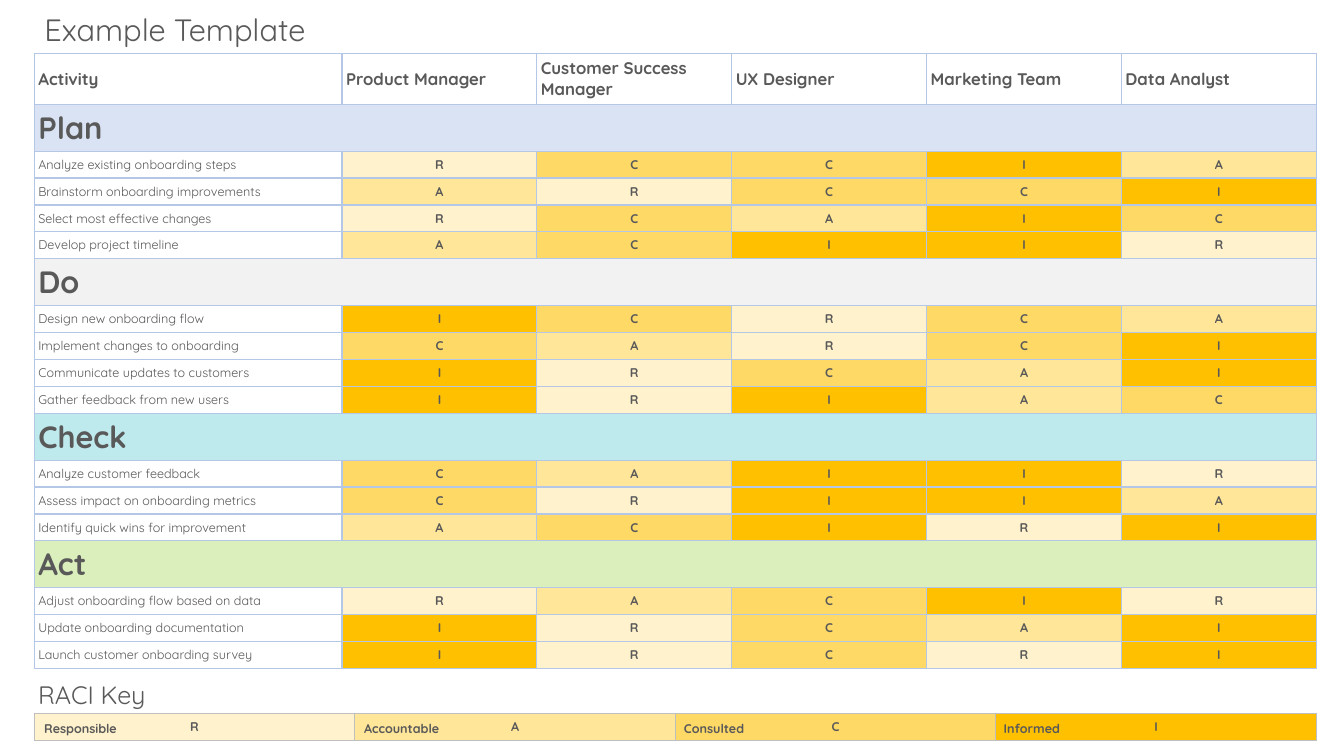
import lxml.etree
import pptx
import pptx.dml.color
import pptx.enum.text
import pptx.oxml.ns
import pptx.util

RGBColor = pptx.dml.color.RGBColor
Anchor = pptx.enum.text.MSO_ANCHOR
Align = pptx.enum.text.PP_ALIGN

PX = 3048  # EMU, 300 px to the inch
FONT = "Quicksand"
TEXT_GREY = RGBColor(0x59, 0x59, 0x59)
GRID_BLUE = RGBColor(0xB4, 0xC7, 0xE7)
GRID_GREY = RGBColor(0xBF, 0xBF, 0xBF)
PLAN_BLUE = RGBColor(0xDA, 0xE3, 0xF3)
DO_GREY = RGBColor(0xF2, 0xF2, 0xF2)
CHECK_TEAL = RGBColor(0xBF, 0xEA, 0xED)
ACT_GREEN = RGBColor(0xDA, 0xEF, 0xBB)
ROLE_COLORS = {
    "R": RGBColor(0xFF, 0xF2, 0xCC),
    "A": RGBColor(0xFF, 0xE6, 0x99),
    "C": RGBColor(0xFF, 0xD9, 0x66),
    "I": RGBColor(0xFF, 0xC0, 0x00),
}
ROLE_NAMES = ["Responsible", "Accountable", "Consulted", "Informed"]

TABLE_LEFT = 102
ACTIVITY_WIDTH, TEAM_WIDTH = 916, 580
HEADER_HEIGHT, PHASE_HEIGHT, ACTIVITY_HEIGHT = 150, 140, 80
KEY_WIDTH, KEY_LABEL_PITCH = 954, 952
CELL_MARGIN = 12

HEADERS = ["Activity", "Product Manager", "Customer Success Manager",
           "UX Designer", "Marketing Team", "Data Analyst"]
PHASES = [
    ("Plan", PLAN_BLUE, [
        ("Analyze existing onboarding steps", "RCCIA"),
        ("Brainstorm onboarding improvements", "ARCCI"),
        ("Select most effective changes", "RCAIC"),
        ("Develop project timeline", "ACIIR"),
    ]),
    ("Do", DO_GREY, [
        ("Design new onboarding flow", "ICRCA"),
        ("Implement changes to onboarding", "CARCI"),
        ("Communicate updates to customers", "IRCAI"),
        ("Gather feedback from new users", "IRIAC"),
    ]),
    ("Check", CHECK_TEAL, [
        ("Analyze customer feedback", "CAIIR"),
        ("Assess impact on onboarding metrics", "CRIIA"),
        ("Identify quick wins for improvement", "ACIRI"),
    ]),
    ("Act", ACT_GREEN, [
        ("Adjust onboarding flow based on data", "RACIR"),
        ("Update onboarding documentation", "IRCAI"),
        ("Launch customer onboarding survey", "IRCRI"),
    ]),
]


def write_text(frame, text, size=9, bold=False, align=Align.LEFT):
    paragraph = frame.paragraphs[0]
    paragraph.alignment = align
    run = paragraph.add_run()
    run.text = text
    run.font.name = FONT
    run.font.size = pptx.util.Pt(size)
    run.font.bold = bold
    run.font.color.rgb = TEXT_GREY


def place_text(shape, box, text, **text_format):
    shape.left, shape.top, shape.width, shape.height = [PX * length for length in box]
    frame = shape.text_frame
    frame.word_wrap = True
    frame.auto_size = pptx.enum.text.MSO_AUTO_SIZE.SHAPE_TO_FIT_TEXT
    frame.vertical_anchor = Anchor.TOP
    write_text(frame, text, **text_format)


def add_label(slide, box, text, **text_format):
    place_text(slide.shapes.add_textbox(0, 0, 0, 0), box, text, **text_format)


def add_grid(slide, left, top, widths, heights, border_color):
    """Add a table without style banding; every cell is unfilled and bordered."""
    frame = slide.shapes.add_table(len(heights), len(widths), PX * left, PX * top,
                                   PX * sum(widths), PX * sum(heights))
    table = frame.table
    table.first_row = False
    table.horz_banding = False
    for column, width in zip(table.columns, widths):
        column.width = PX * width
    for row, height in zip(table.rows, heights):
        row.height = PX * height
    for cell in table.iter_cells():
        cell.fill.background()
        add_borders(cell, border_color)
    return table


def add_borders(cell, color):
    properties = cell._tc.get_or_add_tcPr()
    qn = pptx.oxml.ns.qn
    for index, side in enumerate(["lnL", "lnR", "lnT", "lnB"]):
        line = lxml.etree.Element(qn("a:" + side), w=str(pptx.util.Pt(1)))
        fill = lxml.etree.SubElement(line, qn("a:solidFill"))
        lxml.etree.SubElement(fill, qn("a:srgbClr"), val=str(color))
        properties.insert(index, line)


def fill_cell(cell, text, color=None, **text_format):
    cell.margin_left = cell.margin_right = PX * CELL_MARGIN
    cell.margin_top = cell.margin_bottom = PX * CELL_MARGIN
    cell.vertical_anchor = Anchor.MIDDLE
    if color is not None:
        cell.fill.solid()
        cell.fill.fore_color.rgb = color
    write_text(cell.text_frame, text, **text_format)


def fill_role(cell, role):
    fill_cell(cell, role, ROLE_COLORS[role], bold=True, align=Align.CENTER)


def add_raci_table(slide):
    heights = [HEADER_HEIGHT]
    for _, _, activities in PHASES:
        heights += [PHASE_HEIGHT] + [ACTIVITY_HEIGHT] * len(activities)
    team_count = len(HEADERS) - 1
    widths = [ACTIVITY_WIDTH] + [TEAM_WIDTH] * team_count
    table = add_grid(slide, TABLE_LEFT, 160, widths, heights, GRID_BLUE)

    for column, header in enumerate(HEADERS):
        fill_cell(table.cell(0, column), header, size=12, bold=True)
    row = 1
    for phase, color, activities in PHASES:
        table.cell(row, 0).merge(table.cell(row, team_count))
        fill_cell(table.cell(row, 0), phase, color, size=22, bold=True)
        row += 1
        for activity, roles in activities:
            fill_cell(table.cell(row, 0), activity)
            for column, role in enumerate(roles, 1):
                fill_role(table.cell(row, column), role)
            row += 1


def add_raci_key(slide):
    add_label(slide, (84, 2007, 1542, 120), "RACI Key", size=18)
    widths = [KEY_WIDTH] * len(ROLE_COLORS)
    table = add_grid(slide, TABLE_LEFT, 2123, widths, [ACTIVITY_HEIGHT], GRID_GREY)
    for column, (role, name) in enumerate(zip(ROLE_COLORS, ROLE_NAMES)):
        fill_role(table.cell(0, column), role)
        left = TABLE_LEFT + column * KEY_LABEL_PITCH
        add_label(slide, (left, 2130, 948, 75), name, bold=True)


def main():
    presentation = pptx.Presentation()
    presentation.slide_width = PX * 4000
    presentation.slide_height = PX * 2250
    slide = presentation.slides.add_slide(presentation.slide_layouts[5])
    place_text(slide.shapes.title, (TABLE_LEFT, 18, 1542, 141), "Example Template", size=22)
    add_raci_table(slide)
    add_raci_key(slide)
    presentation.save("out.pptx")


if __name__ == "__main__":
    main()
